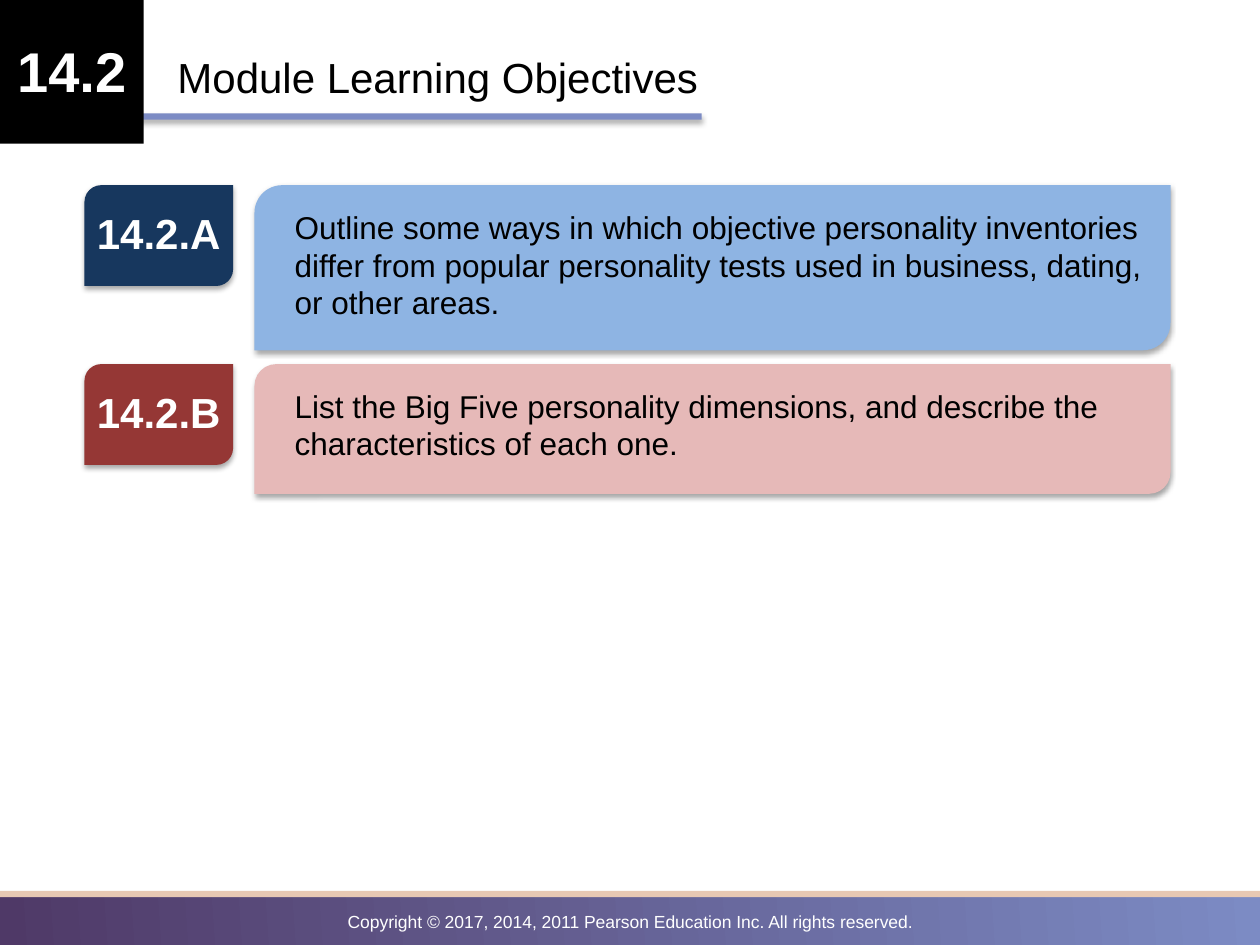
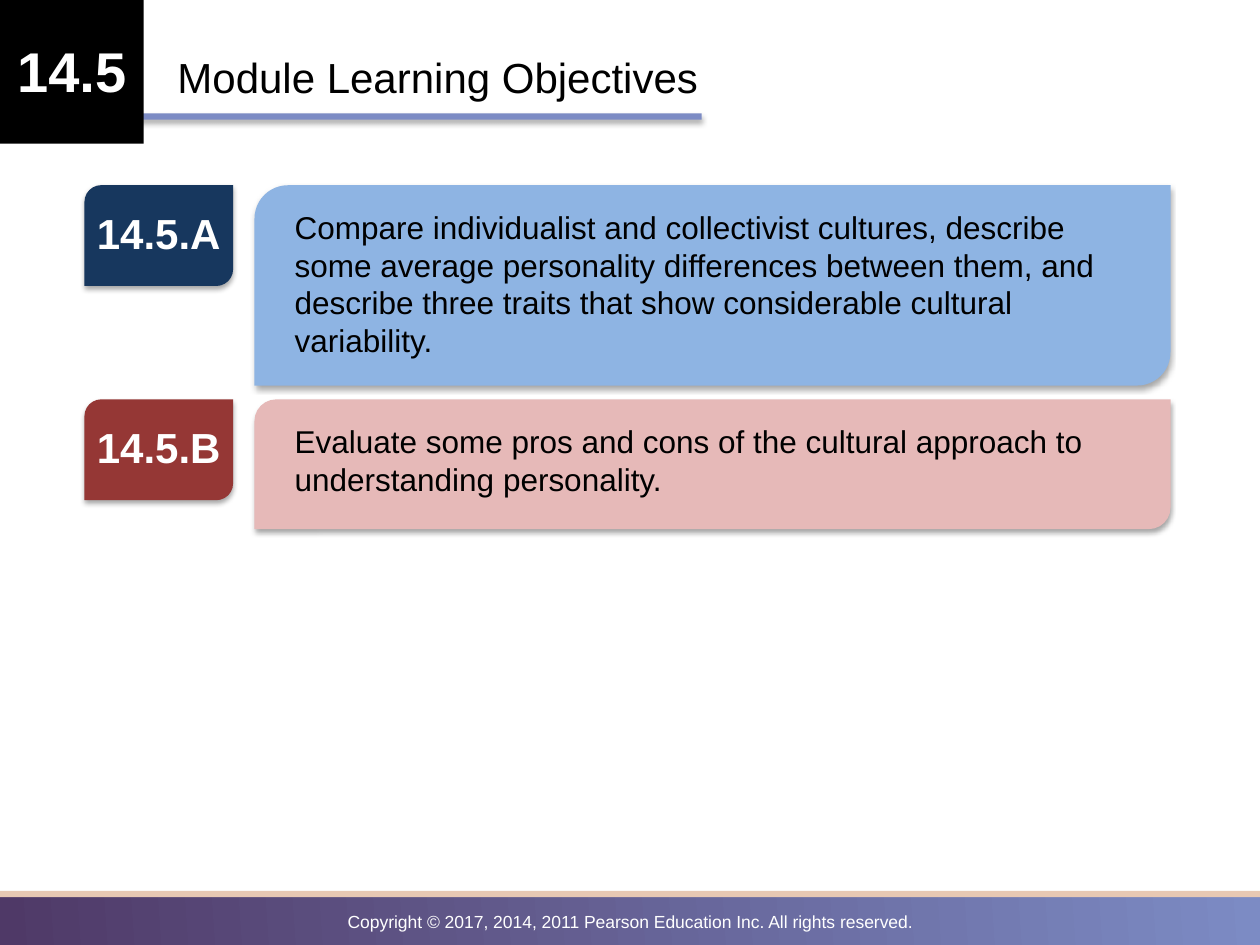
from lxml import etree
from pptx import Presentation
from pptx.dml.color import RGBColor
from pptx.enum.shapes import MSO_SHAPE
from pptx.enum.text import PP_ALIGN
from pptx.oxml.ns import qn
from pptx.util import Inches, Pt

RECT = MSO_SHAPE.RECTANGLE
CARD = MSO_SHAPE.ROUND_2_DIAG_RECTANGLE
LEFT, CENTER = PP_ALIGN.LEFT, PP_ALIGN.CENTER

FONT = "Arial"
BLACK, WHITE = "000000", "FFFFFF"
PURPLE, VIOLET, SAND = "4F3967", "7C8BC4", "E7C8B3"
TONES = [("17375E", "8EB4E3"), ("953735", "E6B9B8")]  # tag, card

TITLE = "Module Learning Objectives"
COPYRIGHT = ("Copyright © 2017, 2014, 2011 Pearson Education Inc. "
             "All rights reserved.")

# Module number, then each goal with its count of lines
MODULES = [
    ("14.2", [
        ("Outline some ways in which objective personality inventories differ "
         "from popular personality tests used in business, dating, or other "
         "areas.", 3),
        ("List the Big Five personality dimensions, and describe the "
         "characteristics of each one.", 2),
    ]),
    ("14.5", [
        ("Compare individualist and collectivist cultures, describe some "
         "average personality differences between them, and describe three "
         "traits that show considerable cultural variability.", 4),
        ("Evaluate some pros and cons of the cultural approach to "
         "understanding personality.", 2),
    ]),
]

TOP, GAP = 1.47, 0.11
PAD, LINE = 0.47, 0.28  # card height = PAD + LINE per line of text
DROP = 0.13  # from the top of a card to its text box


def color(code):
    return RGBColor.from_string(code)


class Deck:
    """Holds the presentation, its style and the slide being built."""

    def __init__(self):
        self.prs = Presentation()
        self.prs.slide_width = Inches(10)
        self.prs.slide_height = Inches(7.5)
        self.slide = None

    def shape(self, kind, x, y, w, h, fill, shadow=False):
        box = self.slide.shapes.add_shape(
            kind, Inches(x), Inches(y), Inches(w), Inches(h))
        box.shadow.inherit = False
        box.fill.solid()
        box.fill.fore_color.rgb = color(fill)
        box.line.fill.background()
        if shadow:
            self.shade(box)
        return box

    def shade(self, box):
        """Give the shape a soft shadow straight below it."""
        effects = box._element.spPr.find(qn("a:effectLst"))
        outer = etree.SubElement(
            effects, qn("a:outerShdw"), blurRad=str(Pt(3.1)),
            dist=str(Pt(1.8)), dir="5400000", rotWithShape="0")
        tint = etree.SubElement(outer, qn("a:srgbClr"), val=BLACK)
        etree.SubElement(tint, qn("a:alpha"), val="35000")

    def text(self, words, x, y, w, h, size=18, ink=BLACK, bold=False,
             align=LEFT, side=0.1):
        box = self.slide.shapes.add_textbox(
            Inches(x), Inches(y), Inches(w), Inches(h))
        frame = box.text_frame
        frame.word_wrap = True
        frame.margin_left = frame.margin_right = Inches(side)
        para = frame.paragraphs[0]
        para.alignment = align
        run = para.add_run()
        run.text = words
        font = run.font
        font.name, font.size, font.bold = FONT, Pt(size), bold
        font.color.rgb = color(ink)

    def label(self, words, x, y, w, h, size):
        self.text(words, x, y, w, h, size=size, ink=WHITE, bold=True,
                  align=CENTER, side=0)

    def footer(self):
        band = self.shape(RECT, 0, 7.08, 10, 0.42, PURPLE)
        band.fill.gradient()
        band.fill.gradient_angle = 4
        for stop, code in zip(band.fill.gradient_stops, (PURPLE, VIOLET)):
            stop.color.rgb = color(code)
        self.shape(RECT, 0, 7.07, 10, 0.05, SAND)
        self.text(COPYRIGHT, 0, 7.18, 10, 0.27, size=10, ink=WHITE,
                  align=CENTER)

    def header(self, number):
        self.shape(RECT, 0, 0.9, 5.57, 0.05, VIOLET, shadow=True)
        self.shape(RECT, 0, 0, 1.14, 1.14, BLACK)
        self.label(number, 0, 0.24, 1.14, 0.64, 32)
        self.text(TITLE, 1.31, 0.36, 7.71, 0.5, size=24)

    def goal(self, code, words, y, high, tones):
        tag, card = tones
        self.shape(CARD, 0.67, y, 1.18, 0.8, tag, shadow=True)
        self.label(code, 0.67, y + DROP, 1.18, 0.5, 24)
        self.shape(CARD, 2.02, y, 7.27, high, card, shadow=True)
        self.text(words, 2.24, y + DROP, 6.99, high - 0.3)

    def module(self, number, goals):
        blank = self.prs.slide_layouts[6]
        self.slide = self.prs.slides.add_slide(blank)
        self.footer()
        self.header(number)
        y = TOP
        for mark, (words, lines), tones in zip("AB", goals, TONES):
            high = PAD + LINE * lines
            self.goal(f"{number}.{mark}", words, y, high, tones)
            y += high + GAP


def main():
    deck = Deck()
    for number, goals in MODULES:
        deck.module(number, goals)
    deck.prs.save("out.pptx")


if __name__ == "__main__":
    main()
